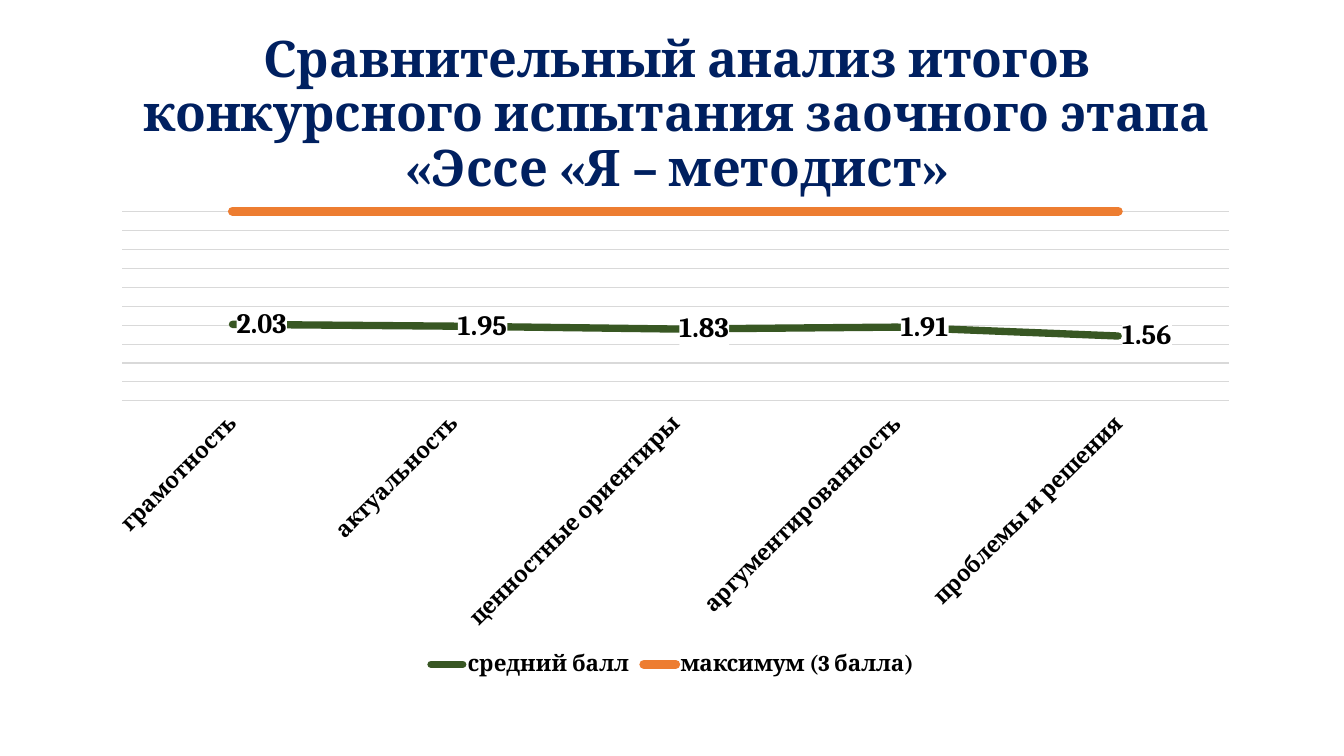
from dataclasses import dataclass
from typing import Any

from lxml.etree import SubElement
from pptx import Presentation
from pptx.chart.data import CategoryChartData
from pptx.dml.color import RGBColor
from pptx.enum.chart import XL_CHART_TYPE as ChartType
from pptx.enum.chart import XL_LABEL_POSITION as LabelPosition
from pptx.enum.chart import XL_LEGEND_POSITION as LegendPosition
from pptx.enum.chart import XL_MARKER_STYLE as MarkerStyle
from pptx.enum.chart import XL_TICK_LABEL_POSITION as TickLabelPosition
from pptx.enum.chart import XL_TICK_MARK as TickMark
from pptx.enum.text import MSO_ANCHOR as Anchor
from pptx.enum.text import PP_ALIGN as Align
from pptx.oxml import parse_xml
from pptx.oxml.ns import nsdecls, qn
from pptx.util import Inches, Pt

NAVY = RGBColor(0x00, 0x20, 0x60)
BLACK = RGBColor(0x00, 0x00, 0x00)
GREY = RGBColor(0xD9, 0xD9, 0xD9)
GREEN = RGBColor(0x38, 0x57, 0x23)
ORANGE = RGBColor(0xED, 0x7D, 0x31)

WIDTH, HEIGHT = Inches(13.33), Inches(7.5)
SERIF = "Cambria"
TITLE = ("Сравнительный анализ итогов",
         "конкурсного испытания заочного этапа",
         "«Эссе «Я – методист»")
CRITERIA = ("грамотность", "актуальность", "ценностные ориентиры",
            "аргументированность", "проблемы и решения")


@dataclass(frozen=True)
class Area:
    """A rectangle given as shares of the slide's size."""
    left: float
    top: float
    width: float
    height: float

    def box(self) -> tuple[int, int, int, int]:
        return (int(self.left * WIDTH), int(self.top * HEIGHT),
                int(self.width * WIDTH), int(self.height * HEIGHT))


@dataclass(frozen=True)
class ScoreLine:
    name: str
    values: tuple[float, ...]
    color: RGBColor
    width: float
    labelled: bool = False


TITLE_AREA = Area(0.0345, 0.056, 0.9385, 0.1933)
CHART_AREA = Area(0.069, 0.2667, 0.8627, 0.6347)
SCORE_LINES = (
    ScoreLine("средний балл", (2.03, 1.95, 1.83, 1.91, 1.56), GREEN, 5.25, True),
    ScoreLine("максимум (3 балла)", (3,) * len(CRITERIA), ORANGE, 6.5),
)


def apply(target: Any, formats: dict[str, Any]) -> None:
    for name, value in formats.items():
        setattr(target, name, value)


def style_font(font: Any, size: float, color: RGBColor = BLACK,
               name: str = SERIF, bold: bool = True) -> None:
    apply(font, {"name": name, "size": Pt(size), "bold": bold})
    font.color.rgb = color


def style_line(line: Any, color: RGBColor, width: float) -> None:
    line.color.rgb = color
    line.width = Pt(width)


def add_title(slide: Any) -> None:
    frame = slide.shapes.add_textbox(*TITLE_AREA.box()).text_frame
    apply(frame, {"word_wrap": True, "vertical_anchor": Anchor.MIDDLE})
    paragraph = frame.paragraphs[0]
    paragraph.text = "\v".join(TITLE)
    apply(paragraph, {"alignment": Align.CENTER, "line_spacing": 0.9})
    for run in paragraph.runs:
        style_font(run.font, 36, NAVY)


def style_series(series: Any, score: ScoreLine) -> None:
    series.smooth = False
    series.marker.style = MarkerStyle.NONE
    style_line(series.format.line, score.color, score.width)
    outline = series._element.find(qn("c:spPr")).find(qn("a:ln"))
    outline.set("cap", "rnd")
    SubElement(outline, qn("a:round"))
    if score.labelled:
        labels = series.data_labels
        apply(labels, {"show_value": True, "position": LabelPosition.RIGHT})
        style_font(labels.font, 20)
        # White backing keeps the values readable over the lines
        backing = parse_xml(
            f'<c:spPr {nsdecls("c", "a")}><a:solidFill>'
            '<a:srgbClr val="FFFFFF"/></a:solidFill></c:spPr>')
        labels._element.find(qn("c:txPr")).addprevious(backing)


def add_score_chart(slide: Any) -> None:
    data = CategoryChartData()
    data.categories = CRITERIA
    for score in SCORE_LINES:
        data.add_series(score.name, score.values)
    chart = slide.shapes.add_chart(
        ChartType.LINE_STACKED_100, *CHART_AREA.box(), data).chart
    apply(chart, {"has_title": False, "has_legend": True})
    style_font(chart.font, 10, name="Calibri", bold=False)

    # Legend
    apply(chart.legend, {"position": LegendPosition.BOTTOM,
                         "include_in_layout": False})
    style_font(chart.legend.font, 16)

    # Axes
    no_ticks = {"major_tick_mark": TickMark.NONE, "minor_tick_mark": TickMark.NONE}
    category_axis, value_axis = chart.category_axis, chart.value_axis
    apply(category_axis, no_ticks | {"tick_label_position": TickLabelPosition.LOW})
    style_font(category_axis.tick_labels.font, 16)
    style_line(category_axis.format.line, GREY, 0.75)
    text_body = category_axis._element.find(qn("c:txPr")).find(qn("a:bodyPr"))
    text_body.set("rot", str(-45 * 60000))
    apply(value_axis, no_ticks | {"visible": False, "has_major_gridlines": True})
    style_line(value_axis.major_gridlines.format.line, GREY, 0.75)

    # Lines
    plot = chart.plots[0]
    plot.vary_by_categories = False
    for series, score in zip(plot.series, SCORE_LINES):
        style_series(series, score)


def main() -> None:
    presentation = Presentation()
    apply(presentation, {"slide_width": WIDTH, "slide_height": HEIGHT})
    slide = presentation.slides.add_slide(presentation.slide_layouts[6])
    add_title(slide)
    add_score_chart(slide)
    presentation.save("out.pptx")


if __name__ == "__main__":
    main()
